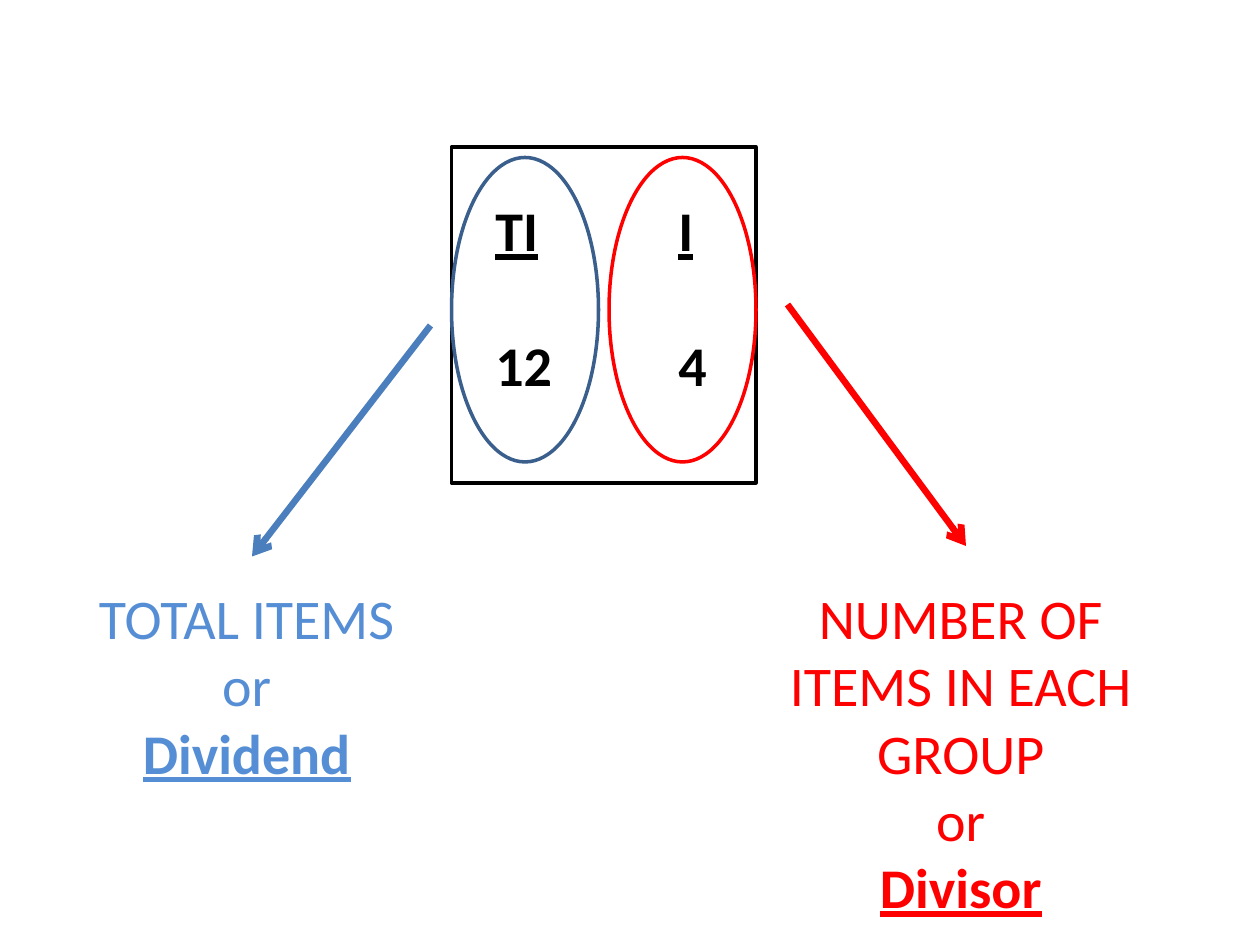
from dataclasses import dataclass
from typing import NamedTuple

from lxml.etree import SubElement
from pptx import Presentation
from pptx.dml.color import RGBColor
from pptx.enum.shapes import MSO_CONNECTOR, MSO_SHAPE
from pptx.enum.text import MSO_AUTO_SIZE, PP_ALIGN
from pptx.oxml.ns import qn
from pptx.util import Pt


@dataclass(frozen=True)
class Theme:
    font: str = "Calibri"
    size: int = 32
    black: str = "000000"
    blue: str = "558ED5"
    ring: str = "3A5F8C"
    shaft: str = "4B7EBC"
    red: str = "FF0000"
    thin: float = 2
    thick: float = 3.75


class Box(NamedTuple):
    left: float
    top: float
    width: float
    height: float


class Part(NamedTuple):
    """One number of the division: its ring, its arrow and its label."""
    ring: Box
    edge: str
    start: tuple[float, float]
    end: tuple[float, float]
    shaft: str
    label: Box
    ink: str
    name: str
    term: str


THEME = Theme()
FRAME = Box(258, 84, 174, 192)
TABLE = Box(276, 108, 138, 145)
TAB = 104.5
GAP = 39
PARTS = [
    Part(Box(258, 90, 84, 174), THEME.ring, (246, 186), (144, 318), THEME.shaft,
         Box(30, 330, 222, 124), THEME.blue, "TOTAL ITEMS", "Dividend"),
    Part(Box(348, 90, 84, 174), THEME.red, (450, 174), (552, 312), THEME.red,
         Box(438, 330, 222, 201), THEME.red, "NUMBER OF ITEMS IN EACH GROUP", "Divisor"),
]


def tint(code: str) -> RGBColor:
    return RGBColor.from_string(code)


def write(para, text: str, *, color: str = THEME.black, bold: bool = False,
          under: bool = False) -> None:
    run = para.add_run()
    run.text = text
    font = run.font
    font.name, font.size = THEME.font, Pt(THEME.size)
    font.bold, font.underline = bold, under
    font.color.rgb = tint(color)


def add_paras(slide, box: Box, count: int) -> list:
    """Add a text box and return its empty paragraphs."""
    frame = slide.shapes.add_textbox(*map(Pt, box)).text_frame
    frame.word_wrap = True
    frame.auto_size = MSO_AUTO_SIZE.SHAPE_TO_FIT_TEXT
    for _ in range(count - 1):
        frame.add_paragraph()
    return list(frame.paragraphs)


def add_outline(slide, kind: MSO_SHAPE, box: Box, color: str) -> None:
    shape = slide.shapes.add_shape(kind, *map(Pt, box))
    shape.shadow.inherit = False
    shape.fill.background()
    shape.line.color.rgb = tint(color)
    shape.line.width = Pt(THEME.thin)


def add_arrow(slide, part: Part) -> None:
    arrow = slide.shapes.add_connector(
        MSO_CONNECTOR.STRAIGHT, *map(Pt, part.start + part.end))
    arrow.line.color.rgb = tint(part.shaft)
    arrow.line.width = Pt(THEME.thick)
    SubElement(arrow.line._get_or_add_ln(), qn("a:tailEnd"), type="arrow")
    SubElement(arrow._element.spPr, qn("a:effectLst"))


def add_table_text(slide) -> None:
    """Write the two columns, aligned by a tab stop."""
    head, row = add_paras(slide, TABLE, 2)
    row.space_before = Pt(GAP)
    for para in (head, row):
        tabs = SubElement(para._p.get_or_add_pPr(), qn("a:tabLst"))
        SubElement(tabs, qn("a:tab"), pos=str(Pt(TAB)), algn="l")
    write(head, "TI", bold=True, under=True)
    write(head, "\t", bold=True)
    write(head, "I", bold=True, under=True)
    write(row, "12\t4", bold=True)


def add_label(slide, part: Part) -> None:
    paras = add_paras(slide, part.label, 3)
    for para, text in zip(paras, (part.name, "or", part.term)):
        key = text == part.term
        para.alignment = PP_ALIGN.CENTER
        write(para, text, color=part.ink, bold=key, under=key)


def main() -> None:
    deck = Presentation()
    deck.slide_width, deck.slide_height = Pt(720), Pt(540)
    slide = deck.slides.add_slide(deck.slide_layouts[6])
    add_outline(slide, MSO_SHAPE.RECTANGLE, FRAME, THEME.black)
    add_table_text(slide)
    for part in PARTS:
        add_outline(slide, MSO_SHAPE.OVAL, part.ring, part.edge)
        add_arrow(slide, part)
        add_label(slide, part)
    deck.save("out.pptx")


if __name__ == "__main__":
    main()
